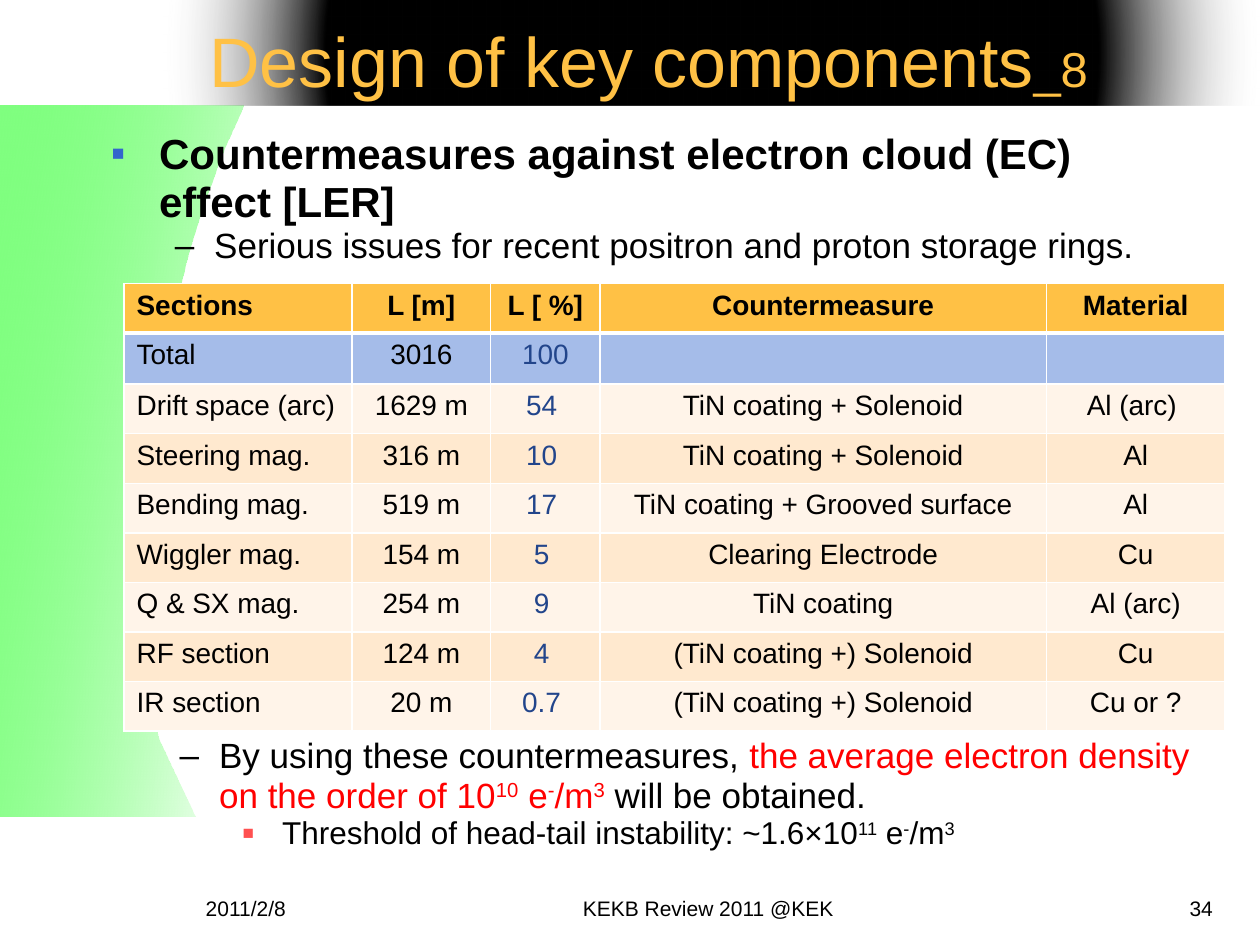
from dataclasses import dataclass

from lxml.etree import SubElement
from pptx import Presentation
from pptx.dml.color import RGBColor
from pptx.enum.shapes import MSO_SHAPE as Shape
from pptx.enum.text import MSO_ANCHOR as Anchor, MSO_AUTO_SIZE as AutoSize, PP_ALIGN as Align
from pptx.oxml import parse_xml
from pptx.oxml.ns import nsdecls, qn
from pptx.util import Pt


@dataclass(frozen=True)
class Theme:
    font: str = "Arial"
    black: str = "000000"
    white: str = "FFFFFF"
    gold: str = "FFC145"
    total: str = "A5BCE9"
    bands: tuple = ("FFF4E9", "FFE9CF")
    navy: str = "22458B"
    red: str = "FF0000"
    green: str = "00FF00"
    bullet_blue: str = "3366CC"
    bullet_red: str = "FF5050"
    title: int = 40
    title_small: int = 28
    heading: int = 24
    body: int = 20
    detail: int = 18
    cell: int = 16
    footer: int = 12


THEME = Theme()

# Per level: left margin, hanging indent, bullet, bullet colour, bullet size in percent
LEVELS = (
    (27, 27, "■", THEME.bullet_blue, 50),
    (58.5, 22.5, "–", None, None),
    (94.5, 22.5, "■", THEME.bullet_red, 60),
)

COLUMNS = (130.3, 79.2, 62.6, 254.9, 102.3)
ROW_HEIGHT = 28.32
ROWS = (
    ("Sections", "L [m]", "L [ %]", "Countermeasure", "Material"),
    ("Total", "3016", "100", "", ""),
    ("Drift space (arc)", "1629 m", "54 ", "TiN coating + Solenoid", "Al (arc) "),
    ("Steering mag.", "316 m", "10 ", "TiN coating + Solenoid", "Al"),
    ("Bending mag.", "519 m", "17 ", "TiN coating + Grooved surface", "Al"),
    ("Wiggler mag.", "154 m", "5 ", "Clearing Electrode", "Cu"),
    ("Q & SX mag.", "254 m", "9 ", "TiN coating", "Al (arc)"),
    ("RF section", "124 m", "4 ", "(TiN coating +) Solenoid", "Cu"),
    ("IR section", "20 m", "0.7 ", "(TiN coating +) Solenoid", "Cu or ?"),
)


def apply(target, values):
    for name, value in values.items():
        setattr(target, name, value)


def place(shape, left, top, width, height):
    apply(shape, dict(left=Pt(left), top=Pt(top), width=Pt(width), height=Pt(height)))


def add_span(para, text, size, color=THEME.black, bold=False, raised=False):
    span = para.add_run()
    span.text = text
    apply(span.font, dict(name=THEME.font, size=Pt(size), bold=bold))
    span.font.color.rgb = RGBColor.from_string(color)
    if raised:
        span.font._element.set("baseline", "30000")


def set_frame(frame, anchor=Anchor.TOP):
    apply(frame, dict(word_wrap=True, auto_size=AutoSize.NONE, vertical_anchor=anchor))


def format_bullet(para, level):
    margin, hanging, mark, color, percent = LEVELS[level]
    apply(para, dict(level=level, line_spacing=0.95, space_before=Pt(0), space_after=Pt(0)))
    props = para._p.get_or_add_pPr()
    props.set("marL", str(Pt(margin)))
    props.set("indent", str(-Pt(hanging)))
    if color:
        SubElement(SubElement(props, qn("a:buClr")), qn("a:srgbClr"), val=color)
    if percent:
        SubElement(props, qn("a:buSzPct"), val=str(percent * 1000))
    SubElement(props, qn("a:buFont"), typeface=THEME.font)
    SubElement(props, qn("a:buChar"), char=mark)


def fill_list(frame, items):
    """Write (level, spans) items; each span holds the arguments of add_span."""
    set_frame(frame)
    for index, (level, spans) in enumerate(items):
        para = frame.add_paragraph() if index else frame.paragraphs[0]
        format_bullet(para, level)
        for span in spans:
            add_span(para, *span)


def add_label(slide, box, text, align):
    label = slide.shapes.add_textbox(*map(Pt, box))
    set_frame(label.text_frame)
    para = label.text_frame.paragraphs[0]
    para.alignment = align
    add_span(para, text, THEME.footer)


def gradient_fill(shape, stops, direction):
    """Fill with (position, colour, opacity) stops, all in percent."""
    marks = "".join(
        f'<a:gs pos="{at * 1000}"><a:srgbClr val="{color}">'
        f'<a:alpha val="{opacity * 1000}"/></a:srgbClr></a:gs>'
        for at, color, opacity in stops)
    fill = parse_xml(f'<a:gradFill {nsdecls("a")} rotWithShape="1">'
                     f'<a:gsLst>{marks}</a:gsLst>{direction}</a:gradFill>')
    shape.shadow.inherit = False
    shape.line.fill.background()
    shape.fill.background()
    props = shape._element.spPr
    props.replace(props.find(qn("a:noFill")), fill)


def cubic(start, first, second, end, steps=24):
    for step in range(1, steps + 1):
        t = step / steps
        weights = ((1 - t) ** 3, 3 * t * (1 - t) ** 2, 3 * t * t * (1 - t), t ** 3)
        yield tuple(sum(w * p[axis] for w, p in zip(weights, (start, first, second, end)))
                    for axis in (0, 1))


def add_backdrop(slide):
    # Green side panel with a curved right edge
    edge = [(139, 60.5), (131.8, 78.5), (128.2, 80.6), (111.6, 131.8), (95.8, 182.9),
            (90.7, 234), (88.6, 280.8), (87.1, 328.3), (85, 396), (90.7, 421.9)]
    points = [point for i in (0, 3, 6) for point in cubic(*edge[i:i + 4])]
    points += [(111.6, 466.6), (0, 466.6), (0, 60.5)]
    # Drawn in hundredths of a point, since the builder rounds to whole units
    start, *rest = [(x * 100, y * 100) for x, y in [edge[0], *points]]
    builder = slide.shapes.build_freeform(*start, scale=Pt(1) / 100)
    builder.add_line_segments(rest, close=True)
    panel = builder.convert_to_shape()
    gradient_fill(panel, [(0, THEME.green, 50), (100, THEME.white, 100)],
                  '<a:lin ang="600000" scaled="0"/>')

    # Black title band fading at both ends
    band = slide.shapes.add_shape(Shape.RECTANGLE, *map(Pt, (93.6, 0, 626.4, 60.5)))
    gradient_fill(band, [(70, THEME.black, 100), (100, THEME.white, 0), (100, THEME.white, 100)],
                  '<a:path path="circle"><a:fillToRect l="50000" t="50000" '
                  'r="50000" b="50000"/></a:path>')

    # Both go behind the placeholders
    for index, shape in enumerate((panel, band), start=2):
        slide.shapes._spTree.insert(index, shape._element)


def set_borders(cell, bottom):
    props = cell._tc.get_or_add_tcPr()
    for index, (side, width) in enumerate(zip("LRTB", (1, 1, 1, bottom))):
        props.insert(index, parse_xml(
            f'<a:ln{side} {nsdecls("a")} w="{Pt(width)}"><a:solidFill>'
            f'<a:srgbClr val="{THEME.white}"/></a:solidFill></a:ln{side}>'))


def add_sections_table(slide):
    box = map(Pt, (70.9, 162, sum(COLUMNS), ROW_HEIGHT * len(ROWS)))
    table = slide.shapes.add_table(len(ROWS), len(COLUMNS), *box).table
    apply(table, dict(first_row=False, horz_banding=False))
    for column, width in zip(table.columns, COLUMNS):
        column.width = Pt(width)
    for r, texts in enumerate(ROWS):
        table.rows[r].height = Pt(ROW_HEIGHT)
        fill = (THEME.gold, THEME.total)[r] if r < 2 else THEME.bands[r % 2]
        for c, text in enumerate(texts):
            cell = table.cell(r, c)
            cell.fill.solid()
            cell.fill.fore_color.rgb = RGBColor.from_string(fill)
            set_borders(cell, bottom=1 if r else 3)
            para = cell.text_frame.paragraphs[0]
            para.alignment = Align.CENTER if c else Align.LEFT
            if text:
                color = THEME.navy if r and c == 2 else THEME.black
                add_span(para, text, THEME.cell, color, r == 0)


def density(size, color):
    """Spans for the unit e-/m3 with raised sign and power."""
    return [(text, size, color, False, raised)
            for text, raised in ((" e", False), ("-", True), ("/m", False), ("3", True))]


def main():
    deck = Presentation()
    apply(deck, dict(slide_width=Pt(720), slide_height=Pt(540)))
    slide = deck.slides.add_slide(deck.slide_layouts[1])
    add_backdrop(slide)

    # Title
    title, body = slide.placeholders
    place(title, 112.5, 5.8, 586.8, 56.9)
    set_frame(title.text_frame, Anchor.MIDDLE)
    para = title.text_frame.paragraphs[0]
    para.alignment = Align.LEFT
    add_span(para, "Design of key components", THEME.title, THEME.gold)
    add_span(para, "_8", THEME.title_small, THEME.gold)

    # Points above the table
    place(body, 56.7, 71.3, 632.9, 56.9)
    fill_list(body.text_frame, [
        (0, [("Countermeasures against electron cloud (EC) effect [LER]",
              THEME.heading, THEME.black, True)]),
        (1, [("Serious issues for recent positron and proton storage rings.", THEME.body)]),
    ])

    add_sections_table(slide)

    # Footer
    add_label(slide, (110.5, 508.3, 167.8, 20.9), "2011/2/8", Align.LEFT)
    add_label(slide, (532.4, 508.3, 167.8, 20.9), "34", Align.RIGHT)
    add_label(slide, (290.7, 508.3, 228.2, 20.9), "KEKB Review 2011 @KEK", Align.CENTER)

    # Points below the table
    result = slide.shapes.add_textbox(*map(Pt, (59.6, 417.2, 632.9, 56.9)))
    fill_list(result.text_frame, [
        (1, [("By using these countermeasures, ", THEME.body),
             ("the average electron density on the order of 10", THEME.body, THEME.red),
             ("10", THEME.body, THEME.red, False, True),
             *density(THEME.body, THEME.red),
             (" will be obtained.", THEME.body)]),
        (2, [("Threshold of head-tail instability: ~1.6×10", THEME.detail),
             ("11", THEME.detail, THEME.black, False, True),
             *density(THEME.detail, THEME.black)]),
    ])

    deck.save("out.pptx")


if __name__ == "__main__":
    main()
